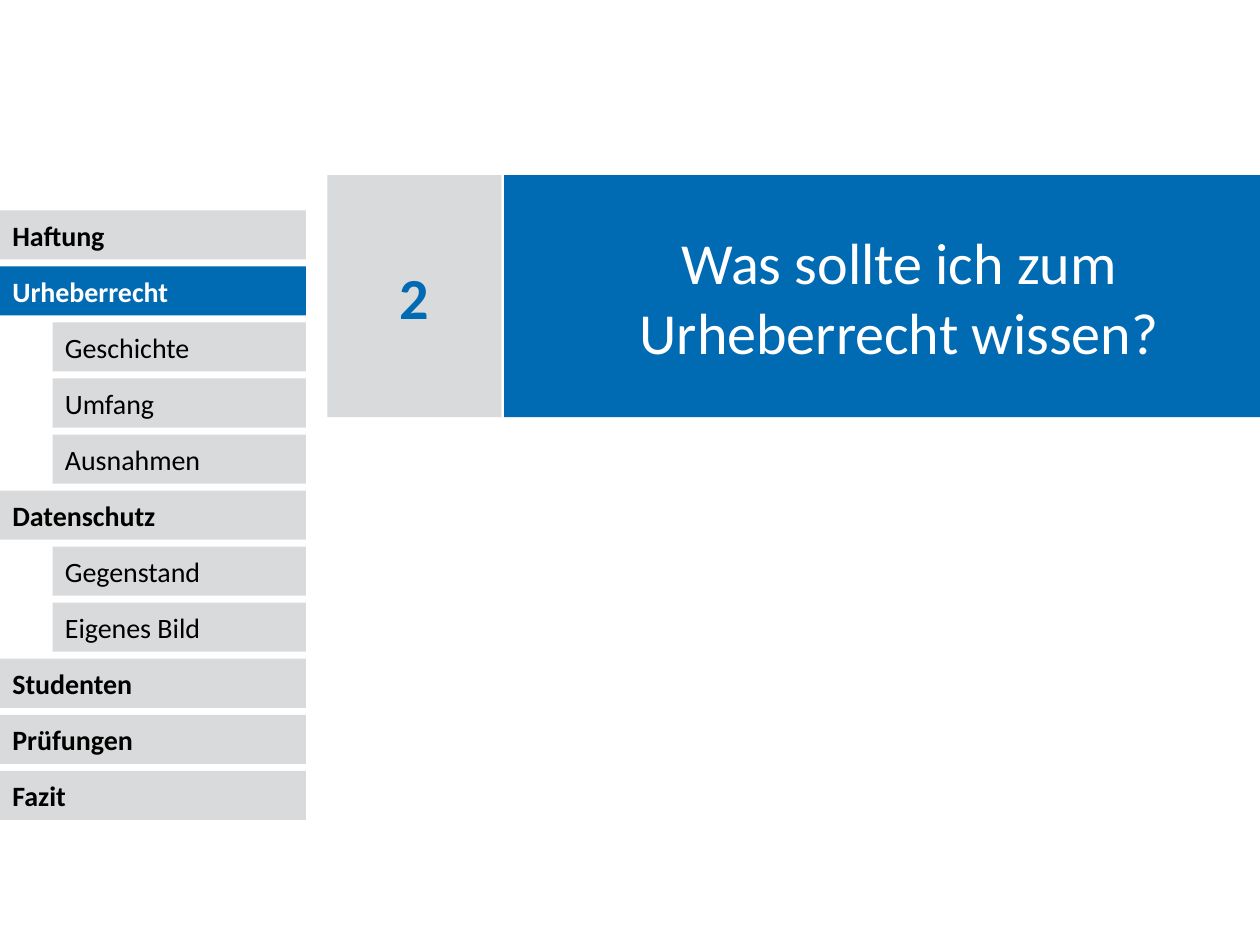
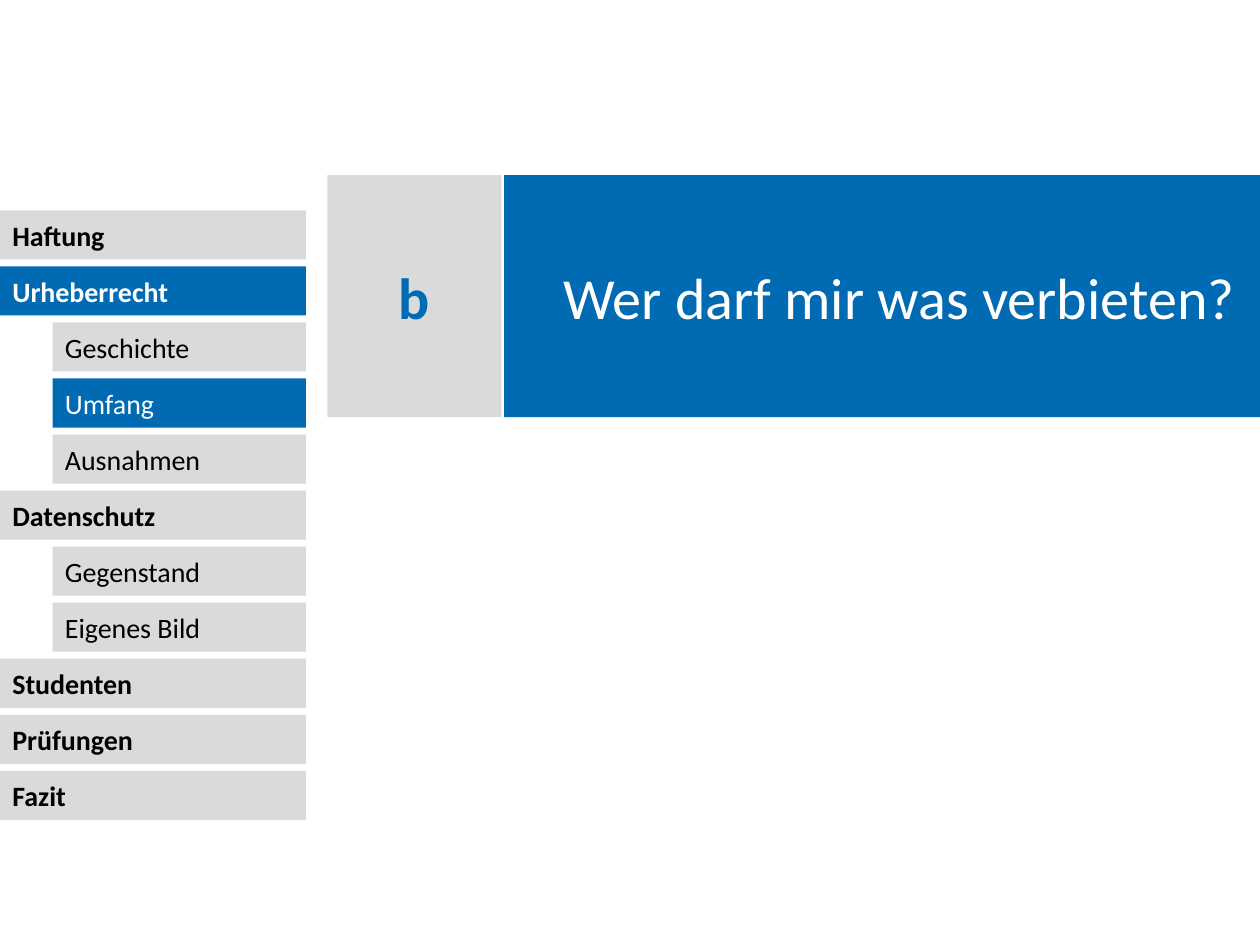
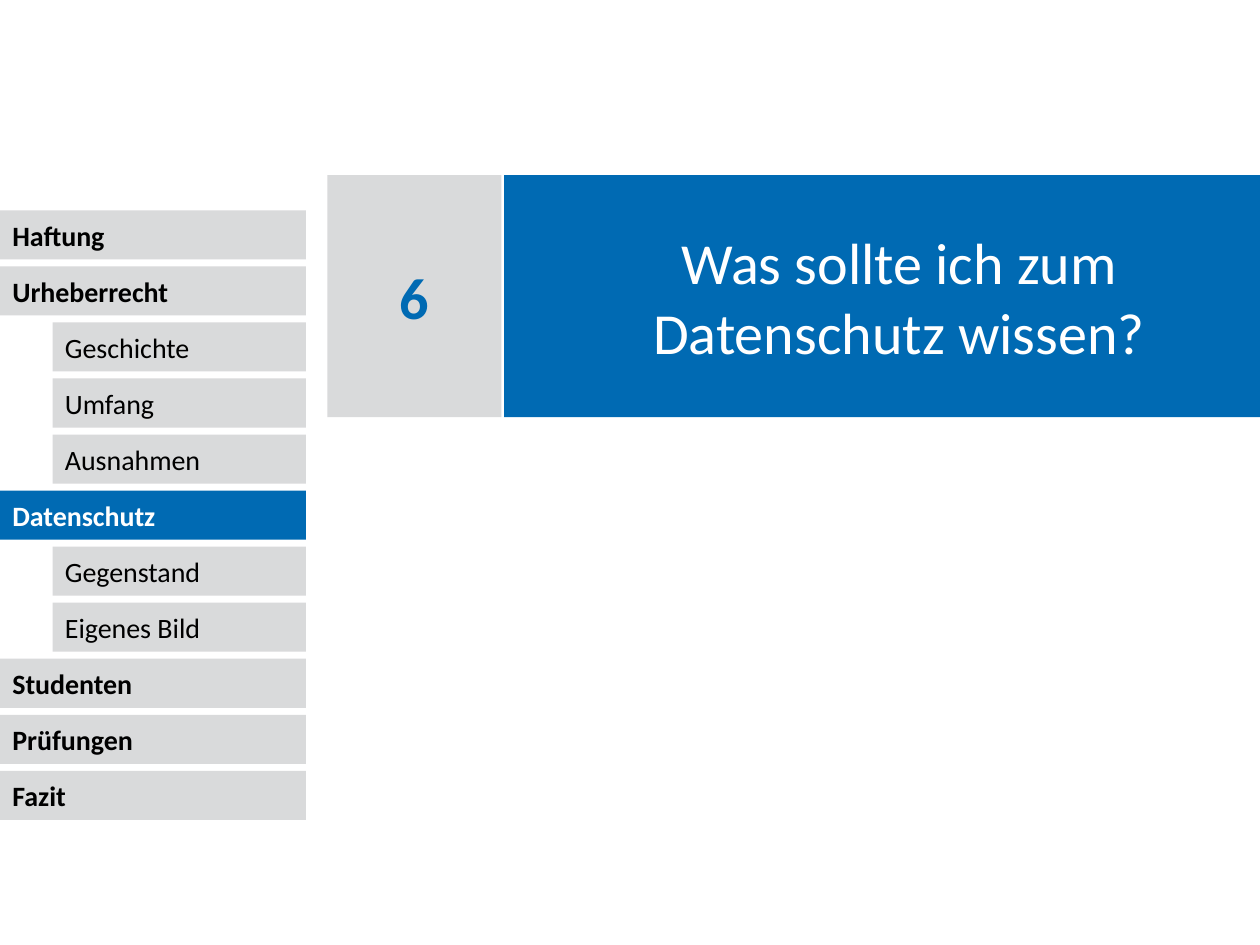
from dataclasses import dataclass

from pptx import Presentation
from pptx import util as u
from pptx.dml.color import RGBColor
from pptx.enum import shapes, text
from pptx.shapes.autoshape import Shape
from pptx.slide import Slide


@dataclass(frozen=True)
class Theme:
    blue: RGBColor = RGBColor(0x00, 0x6A, 0xB3)
    grey: RGBColor = RGBColor(0xD9, 0xDA, 0xDB)
    white: RGBColor = RGBColor(0xFF, 0xFF, 0xFF)
    black: RGBColor = RGBColor(0x00, 0x00, 0x00)
    font: str = "Calibri"
    heading_size: u.Pt = u.Pt(33.2)
    menu_size: u.Pt = u.Pt(16)


@dataclass(frozen=True)
class Box:
    left: float
    top: float
    width: float
    height: float


@dataclass(frozen=True)
class MenuItem:
    label: str
    is_subtopic: bool = False


@dataclass(frozen=True)
class Section:
    marker: str
    question: str
    active_labels: tuple[str, ...]


THEME = Theme()

# Layout, in centimetres
SLIDE_WIDTH, SLIDE_HEIGHT = 25.4, 19.05
MENU_TOP, MENU_PITCH = 4.24, 1.13
MENU_WIDTH, MENU_HEIGHT = 6.17, 0.99
SUBTOPIC_INDENT = 1.06
MARKER_BOX = Box(6.6, 3.53, 3.51, 4.88)
QUESTION_BOX = Box(10.16, 3.53, 15.24, 4.88)
MARGIN, QUESTION_LEFT_MARGIN = 0.3, 1.0

MENU = (
    MenuItem("Haftung"),
    MenuItem("Urheberrecht"),
    MenuItem("Geschichte", is_subtopic=True),
    MenuItem("Umfang", is_subtopic=True),
    MenuItem("Ausnahmen", is_subtopic=True),
    MenuItem("Datenschutz"),
    MenuItem("Gegenstand", is_subtopic=True),
    MenuItem("Eigenes Bild", is_subtopic=True),
    MenuItem("Studenten"),
    MenuItem("Prüfungen"),
    MenuItem("Fazit"),
)

SECTIONS = (
    Section("2", "Was sollte ich zum Urheberrecht wissen?", ("Urheberrecht",)),
    Section("b", "Wer darf mir was verbieten?", ("Urheberrecht", "Umfang")),
    Section("6", "Was sollte ich zum Datenschutz wissen?", ("Datenschutz",)),
)


def fill_box(shape: Shape, fill: RGBColor) -> None:
    shape.fill.solid()
    shape.fill.fore_color.rgb = fill
    shape.line.fill.background()


def write(shape: Shape, content: str, size: u.Pt, color: RGBColor,
          bold: bool, alignment: text.PP_ALIGN) -> None:
    frame = shape.text_frame
    frame.text = content
    frame.word_wrap = True
    frame.auto_size = text.MSO_AUTO_SIZE.NONE
    frame.vertical_anchor = text.MSO_ANCHOR.MIDDLE
    paragraph = frame.paragraphs[0]
    paragraph.alignment = alignment
    paragraph.space_before = u.Pt(0)
    font = paragraph.runs[0].font
    font.name, font.size, font.bold = THEME.font, size, bold
    font.color.rgb = color


def draw_menu(slide: Slide, active_labels: tuple[str, ...]) -> None:
    for row, item in enumerate(MENU):
        indent = SUBTOPIC_INDENT if item.is_subtopic else 0
        is_active = item.label in active_labels
        entry = slide.shapes.add_shape(
            shapes.MSO_SHAPE.RECTANGLE,
            u.Cm(indent), u.Cm(MENU_TOP + row * MENU_PITCH),
            u.Cm(MENU_WIDTH - indent), u.Cm(MENU_HEIGHT))
        entry.shadow.inherit = False
        fill_box(entry, THEME.blue if is_active else THEME.grey)
        write(entry, item.label, THEME.menu_size,
              THEME.white if is_active else THEME.black,
              not item.is_subtopic, text.PP_ALIGN.LEFT)


def format_heading(placeholder: Shape, content: str, box: Box, fill: RGBColor,
                   color: RGBColor, bold: bool, left_margin: float) -> None:
    placeholder.left, placeholder.top = u.Cm(box.left), u.Cm(box.top)
    placeholder.width, placeholder.height = u.Cm(box.width), u.Cm(box.height)
    fill_box(placeholder, fill)
    write(placeholder, content, THEME.heading_size, color, bold, text.PP_ALIGN.CENTER)
    frame = placeholder.text_frame
    frame.margin_left = u.Cm(left_margin)
    frame.margin_top = frame.margin_right = frame.margin_bottom = u.Cm(MARGIN)
    # The section layout sets its title in capitals
    frame.paragraphs[0].runs[0].font._element.set("cap", "none")


def add_section(presentation: Presentation, section: Section) -> None:
    layout = presentation.slide_layouts.get_by_name("Section Header")
    slide = presentation.slides.add_slide(layout)
    format_heading(slide.placeholders[1], section.marker, MARKER_BOX,
                   THEME.grey, THEME.blue, True, MARGIN)
    format_heading(slide.shapes.title, section.question, QUESTION_BOX,
                   THEME.blue, THEME.white, False, QUESTION_LEFT_MARGIN)
    draw_menu(slide, section.active_labels)


def main() -> None:
    presentation = Presentation()
    presentation.slide_width = u.Cm(SLIDE_WIDTH)
    presentation.slide_height = u.Cm(SLIDE_HEIGHT)
    for section in SECTIONS:
        add_section(presentation, section)
    presentation.save("out.pptx")


if __name__ == "__main__":
    main()
